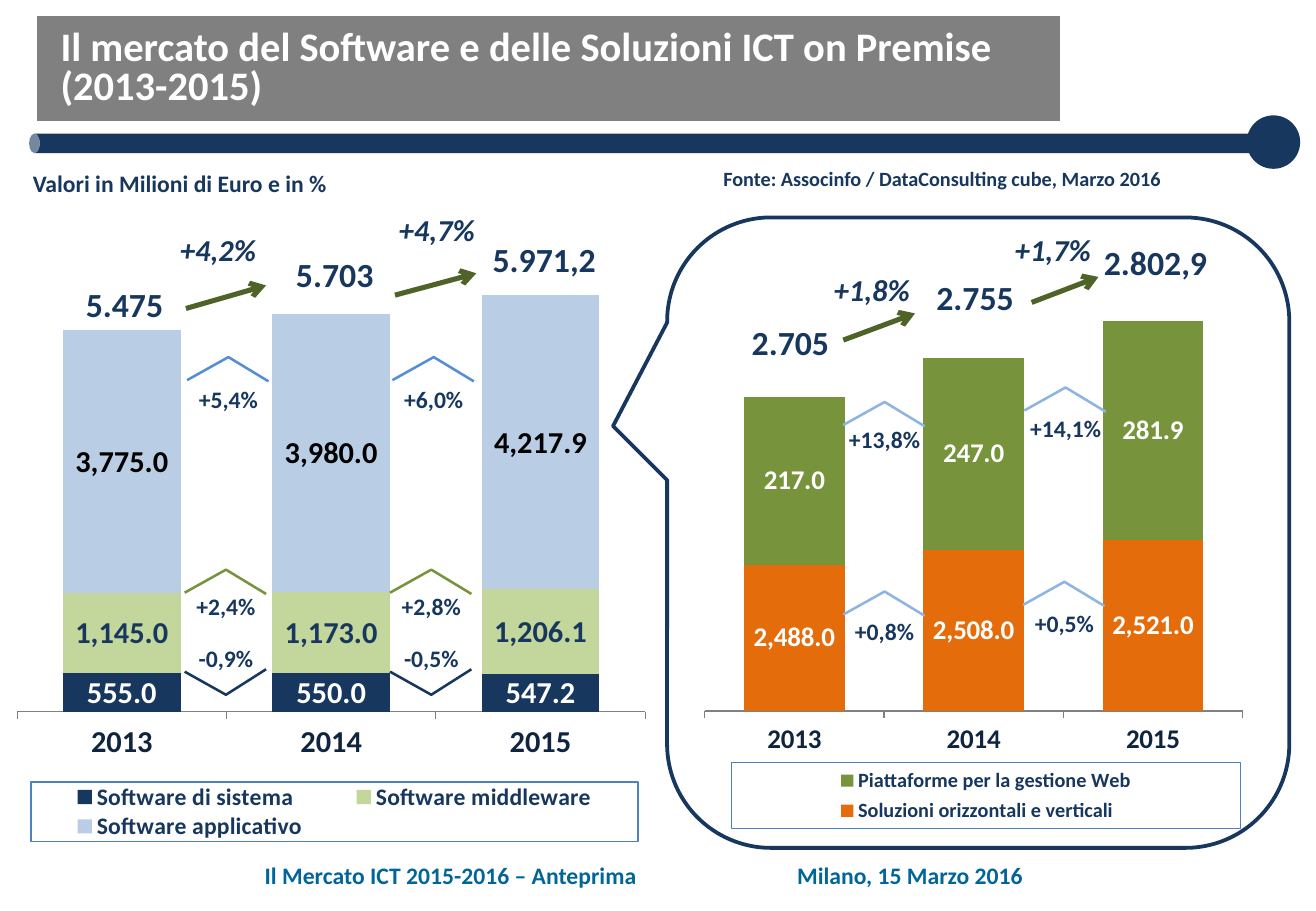
from lxml import etree
from pptx import Presentation
from pptx.chart.data import CategoryChartData
from pptx.dml.color import RGBColor
from pptx.enum.chart import XL_CHART_TYPE, XL_LEGEND_POSITION, XL_TICK_LABEL_POSITION, XL_TICK_MARK
from pptx.enum.shapes import MSO_CONNECTOR, MSO_SHAPE
from pptx.enum.text import PP_ALIGN
from pptx.oxml import parse_xml
from pptx.oxml.ns import nsdecls, qn
from pptx.util import Inches, Pt

STACKED = XL_CHART_TYPE.COLUMN_STACKED
BOTTOM, RIGHT = XL_LEGEND_POSITION.BOTTOM, XL_LEGEND_POSITION.RIGHT
LOW = XL_TICK_LABEL_POSITION.LOW
OUTSIDE, NO_TICK = XL_TICK_MARK.OUTSIDE, XL_TICK_MARK.NONE
STRAIGHT = MSO_CONNECTOR.STRAIGHT
CAN, RECTANGLE, OVAL = MSO_SHAPE.CAN, MSO_SHAPE.RECTANGLE, MSO_SHAPE.OVAL
CALLOUT = MSO_SHAPE.ROUNDED_RECTANGULAR_CALLOUT
CENTER, LEFT = PP_ALIGN.CENTER, PP_ALIGN.LEFT

NAVY = RGBColor(0x17, 0x37, 0x5E)
INK = RGBColor(0x0F, 0x24, 0x3E)
GRAY = RGBColor(0x80, 0x80, 0x80)
WHITE = RGBColor(0xFF, 0xFF, 0xFF)
BLACK = RGBColor(0, 0, 0)
TEAL = RGBColor(0x00, 0x66, 0x99)
PALE_GREEN = RGBColor(0xC3, 0xD6, 0x9B)
PALE_BLUE = RGBColor(0xB9, 0xCD, 0xE5)
GREEN = RGBColor(0x77, 0x93, 0x3C)
DARK_GREEN = RGBColor(0x4F, 0x62, 0x28)
ORANGE = RGBColor(0xE4, 0x6C, 0x0A)
BLUE = RGBColor(0x55, 0x8E, 0xD5)
SKY = RGBColor(0x8E, 0xB4, 0xE3)

deck = Presentation()
deck.slide_width, deck.slide_height = Inches(10.83), Inches(7.5)
page = deck.slides.add_slide(deck.slide_layouts[6])


def add_text(text, left, top, width, height, size, color=NAVY, italic=False, align=CENTER, spacing=1.0):
    box = page.shapes.add_textbox(Inches(left), Inches(top), Inches(width), Inches(height))
    box.text_frame.text = text
    box.text_frame.word_wrap = align == LEFT
    for para in box.text_frame.paragraphs:
        para.alignment = align
        para.line_spacing = spacing
        font = para.runs[0].font
        font.name, font.size, font.bold, font.italic = "Calibri", Pt(size), True, italic
        font.color.rgb = color


def set_layout(parent, index, values, inner=""):
    for old in parent.findall(qn("c:layout")):
        parent.remove(old)
    layout = parse_xml(f'<c:layout {nsdecls("c")}><c:manualLayout>{inner}'
                       '<c:xMode val="edge"/><c:yMode val="edge"/></c:manualLayout></c:layout>')
    for name, value in zip("xywh", values):
        etree.SubElement(layout[0], qn(f"c:{name}")).set("val", str(value))
    parent.insert(index, layout)


frame_shapes = [
    (CAN, 5.21, -3.87, 0.16, 10.1, NAVY, None, 0, [0.551]),
    (RECTANGLE, 0.3, 0.13, 8.43, 0.87, GRAY, WHITE, 0.75, []),
    (OVAL, 10.26, 0.95, 0.44, 0.44, NAVY, None, 0, []),
    (CALLOUT, 5.49, 1.79, 5.12, 5.19, None, NAVY, 2.25, [-0.587, -0.169, 0.167]),
]
for kind, left, top, width, height, fill, line, weight, adjustments in frame_shapes:
    shape = page.shapes.add_shape(kind, Inches(left), Inches(top), Inches(width), Inches(height))
    shape.shadow.inherit = False
    shape.rotation = 270 if kind == CAN else 0
    for index, value in enumerate(adjustments):
        shape.adjustments[index] = value
    if fill is None:
        shape.fill.background()
    else:
        shape.fill.solid()
        shape.fill.fore_color.rgb = fill
    if line is None:
        shape.line.fill.background()
    else:
        shape.line.color.rgb = line
        shape.line.width = Pt(weight)

add_text("Il mercato del Software e delle Soluzioni ICT on Premise\n(2013-2015)",
         0.4, 0.2, 10.4, 1, 24, WHITE, align=LEFT, spacing=0.8)
add_text("Valori in Milioni di Euro e in %", 0.16, 1.34, 2.64, 0.34, 14)
add_text("Fonte: Associnfo / DataConsulting cube, Marzo 2016", 5.85, 1.32, 3.81, 0.3, 12)
add_text("Il Mercato ICT 2015-2016 – Anteprima", 2.08, 7.04, 3.26, 0.34, 14, TEAL)
add_text("Milano, 15 Marzo 2016", 6.46, 7.04, 2.06, 0.34, 14, TEAL)

charts = [
    ((0.06, 1.68, 5.43, 5.3), (0, 7000), 18, 18, 14, BOTTOM, (0.036, 0.898, 0.92, 0.092), [
        ("Software di sistema", (555, 550, 547.2), NAVY, WHITE),
        ("Software middleware", (1145, 1173, 1206.1), PALE_GREEN, NAVY),
        ("Software applicativo", (3775, 3980, 4217.9), PALE_BLUE, BLACK)]),
    ((5.73, 1.87, 4.65, 5.05), (2300, 2900), 16, 16, 12, RIGHT, (0.063, 0.873, 0.9, 0.108), [
        ("Soluzioni orizzontali e verticali", (2488, 2508, 2521), ORANGE, WHITE),
        ("Piattaforme per la gestione Web", (217, 247, 281.9), GREEN, WHITE)]),
]
for place, limits, axis_size, label_size, legend_size, position, legend_place, rows in charts:
    data = CategoryChartData(number_format="#,##0.0")
    data.categories = ["2013", "2014", "2015"]
    for name, values, _, _ in rows:
        data.add_series(name, values)
    chart = page.shapes.add_chart(STACKED, *[Inches(length) for length in place], data).chart
    chart.has_title = False
    chart.font.name, chart.font.size = "Arial", Pt(18)
    chart.font.color.rgb = BLACK
    plot = chart.plots[0]
    plot.gap_width, plot.overlap, plot.vary_by_categories = 78, 100, False
    for series, (_, _, fill, label_color) in zip(plot.series, rows):
        series.format.fill.solid()
        series.format.fill.fore_color.rgb = fill
        labels = series.data_labels
        labels.show_value = True
        labels.number_format, labels.number_format_is_linked = "#,##0.0", False
        labels.font.name, labels.font.size, labels.font.bold = "Calibri", Pt(label_size), True
        labels.font.color.rgb = label_color
    value_axis, category_axis = chart.value_axis, chart.category_axis
    value_axis.minimum_scale, value_axis.maximum_scale = limits
    value_axis.has_major_gridlines = False
    value_axis.visible = False
    category_axis.major_tick_mark, category_axis.minor_tick_mark = OUTSIDE, NO_TICK
    category_axis.tick_label_position = LOW
    category_axis.format.line.color.rgb = GRAY
    font = category_axis.tick_labels.font
    font.name, font.size, font.bold = "Calibri", Pt(axis_size), True
    font.color.rgb = INK
    chart.has_legend = True
    legend = chart.legend
    legend.position = position
    legend.include_in_layout = False
    legend.font.name, legend.font.size, legend.font.bold = "Calibri", Pt(legend_size), True
    legend.font.color.rgb = NAVY
    legend_xml = legend._element
    set_layout(legend_xml, 1, legend_place)
    legend_xml.find(qn("c:txPr")).addprevious(parse_xml(
        f'<c:spPr {nsdecls("c", "a")}><a:ln w="9525"><a:solidFill>'
        '<a:srgbClr val="4F81BD"/></a:solidFill></a:ln></c:spPr>'))
    set_layout(chart._chartSpace.chart.plotArea, 0, (0.015, 0.03, 0.952, 0.759),
               '<c:layoutTarget val="inner"/>')

totals = [("5.475", 0.6, 2.29, 0.85), ("5.703", 2.33, 2.04, 0.85), ("5.971,2", 3.95, 1.92, 1.06),
          ("2.705", 6.08, 2.6, 0.85), ("2.755", 7.6, 2.23, 0.85), ("2.802,9", 8.98, 1.94, 1.06)]
for text, left, top, width in totals:
    add_text(text, left, top, width, 0.44, 20)

growth_arrows = [
    ("+4,2%", 1.38, 1.85, 1.53, 2.54, 2.19, 2.35),
    ("+4,7%", 3.18, 1.69, 3.25, 2.43, 3.92, 2.25),
    ("+1,8%", 6.76, 2.18, 6.94, 2.8, 7.53, 2.58),
    ("+1,7%", 8.25, 1.85, 8.49, 2.49, 9.04, 2.28),
]
for text, left, top, *ends in growth_arrows:
    add_text(text, left, top, 0.83, 0.4, 18, italic=True)
    arrow = page.shapes.add_connector(STRAIGHT, *[Inches(end) for end in ends])
    arrow.line.color.rgb = DARK_GREEN
    arrow.line.width = Pt(3)
    etree.SubElement(arrow.line._get_or_add_ln(), qn("a:tailEnd")).set("type", "arrow")
    etree.SubElement(arrow._element.spPr, qn("a:effectLst"))

UP = [(0, 0.19), (0.34, 0), (0.67, 0.2)]
DOWN = [(0, 0.02), (0.34, 0.21), (0.67, 0)]
chevrons = [
    ("-0,9%", 1.52, 5.51, 5.25, NAVY, DOWN), ("-0,5%", 3.21, 5.51, 5.25, NAVY, DOWN),
    ("+2,4%", 1.52, 4.69, 4.82, GREEN, UP), ("+2,8%", 3.21, 4.69, 4.82, GREEN, UP),
    ("+5,4%", 1.54, 2.94, 3.12, BLUE, UP), ("+6,0%", 3.23, 2.94, 3.12, BLUE, UP),
    ("+0,8%", 6.94, 4.87, 5.03, SKY, UP), ("+0,5%", 8.42, 4.79, 4.96, SKY, UP),
    ("+13,8%", 6.94, 3.31, 3.45, SKY, UP), ("+14,1%", 8.43, 3.19, 3.36, SKY, UP),
]
for text, left, top, label_top, color, outline in chevrons:
    points = [(Inches(left + x), Inches(top + y)) for x, y in outline]
    builder = page.shapes.build_freeform(*points[0])
    builder.add_line_segments(points[1:], close=False)
    chevron = builder.convert_to_shape()
    chevron.shadow.inherit = False
    chevron.fill.background()
    chevron.line.color.rgb = color
    chevron.line.width = Pt(1.5)
    add_text(text, left - 0.06, label_top, 0.8, 0.34, 14)

deck.save("out.pptx")
